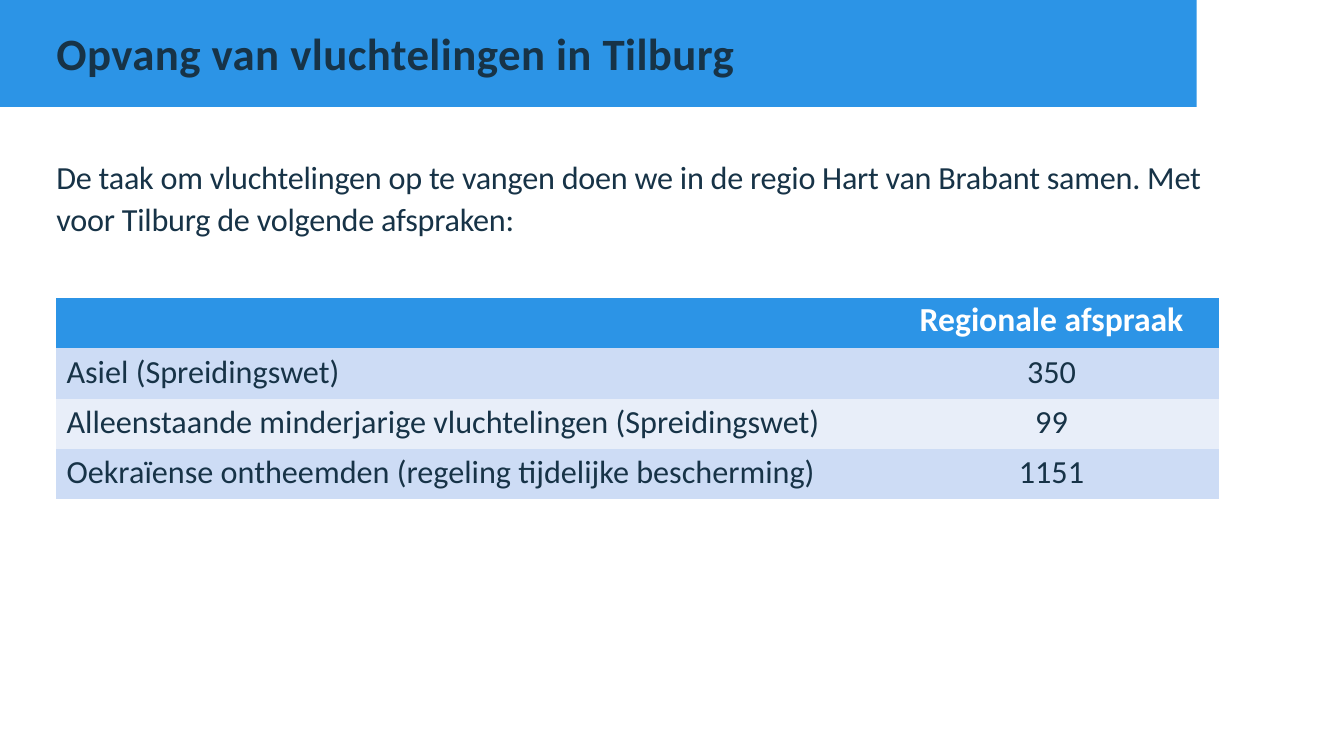
import pptx
import pptx.dml.color
import pptx.enum.shapes
import pptx.enum.text
import pptx.oxml.ns
import pptx.util

Inches, Pt = pptx.util.Inches, pptx.util.Pt
ALIGN, ANCHOR = pptx.enum.text.PP_ALIGN, pptx.enum.text.MSO_ANCHOR

BLUE, NAVY, WHITE = "2C94E6", "173347", "FFFFFF"
BANDS = ["CDDCF5", "E8EEF9"]
NO_GRID_STYLE = "{2D5ABB26-0587-4C30-8999-92F81FD0307C}"
LEFT, WIDTH = 0.56, 11.53

AGREEMENTS = [
    ("", "Regionale afspraak"),
    ("Asiel (Spreidingswet)", "350"),
    ("Alleenstaande minderjarige vluchtelingen (Spreidingswet)", "99"),
    ("Oekraïense ontheemden (regeling tijdelijke bescherming)", "1151"),
]


def rgb(value):
    return pptx.dml.color.RGBColor.from_string(value)


def set_fill(obj, color):
    obj.fill.solid()
    obj.fill.fore_color.rgb = rgb(color)


def write(tf, text, size, line, color=NAVY, bold=False, align=ALIGN.LEFT, tracking=0):
    """Write one paragraph; line height in points, tracking in 1/100 point."""
    p = tf.paragraphs[0]
    p.alignment = align
    p.line_spacing = Pt(line)
    r = p.add_run()
    r.text = text
    r.font.name = "Calibri"
    r.font.size = Pt(size)
    r.font.bold = bold
    r.font.color.rgb = rgb(color)
    if tracking:
        r.font._element.set("spc", str(tracking))


def set_frame(tf, top):
    tf.word_wrap = True
    tf.auto_size = pptx.enum.text.MSO_AUTO_SIZE.NONE
    tf.vertical_anchor = ANCHOR.TOP
    tf.margin_left = tf.margin_right = tf.margin_bottom = 0
    tf.margin_top = Inches(top)


def add_header(s, x, y, w, h):
    sp = s.shapes.add_shape(pptx.enum.shapes.MSO_SHAPE.RECTANGLE,
                            Inches(x), Inches(y), Inches(w), Inches(h))
    sp.shadow.inherit = False
    set_fill(sp, BLUE)
    sp.line.fill.background()
    title = s.shapes.title
    sp._element.addnext(title._element)  # keep the title in front of the band
    title.left, title.top = Inches(x + LEFT), Inches(y + 0.15)
    title.width, title.height = Inches(8.17), Inches(0.63)
    set_frame(title.text_frame, 0.07)
    write(title.text_frame, "Opvang van vluchtelingen in Tilburg", 32, 41,
          bold=True, tracking=30)


def add_intro(s, x, y, w, h):
    sp = s.shapes.add_textbox(Inches(x), Inches(y), Inches(w), Inches(h))
    set_frame(sp.text_frame, 0.05)
    write(sp.text_frame, "De taak om vluchtelingen op te vangen doen we in de regio "
          "Hart van Brabant samen. Met voor Tilburg de volgende afspraken:",
          23, 30, tracking=-20)


def add_agreements(s, x, y, w, h):
    rows = len(AGREEMENTS)
    table = s.shapes.add_table(rows, 2, Inches(x), Inches(y), Inches(w), Inches(h)).table
    table._tbl.tblPr.find(pptx.oxml.ns.qn("a:tableStyleId")).text = NO_GRID_STYLE
    table.columns[0].width = Inches(8.21)
    table.columns[1].width = Inches(w - 8.21)
    for i, values in enumerate(AGREEMENTS):
        table.rows[i].height = Inches(h / rows)
        for j, text in enumerate(values):
            cell = table.cell(i, j)
            set_fill(cell, BANDS[(i - 1) % 2] if i else BLUE)
            cell.vertical_anchor = ANCHOR.MIDDLE
            cell.margin_right = cell.margin_top = cell.margin_bottom = 0
            cell.margin_left = 0 if j else Inches(0.1)
            if text:
                align = ALIGN.CENTER if j else ALIGN.LEFT
                if i:
                    write(cell.text_frame, text, 23, 27, align=align)
                else:
                    write(cell.text_frame, text, 24, 25, WHITE, True, align)


def main():
    prs = pptx.Presentation()
    prs.slide_width, prs.slide_height = Inches(13.33), Inches(7.5)
    s = prs.slides.add_slide(prs.slide_layouts.get_by_name("Title Only"))
    add_header(s, 0, 0, 11.87, 1.06)
    add_intro(s, LEFT, 1.48, WIDTH, 0.97)
    add_agreements(s, LEFT, 2.96, WIDTH, 1.99)
    prs.save("out.pptx")


if __name__ == "__main__":
    main()
